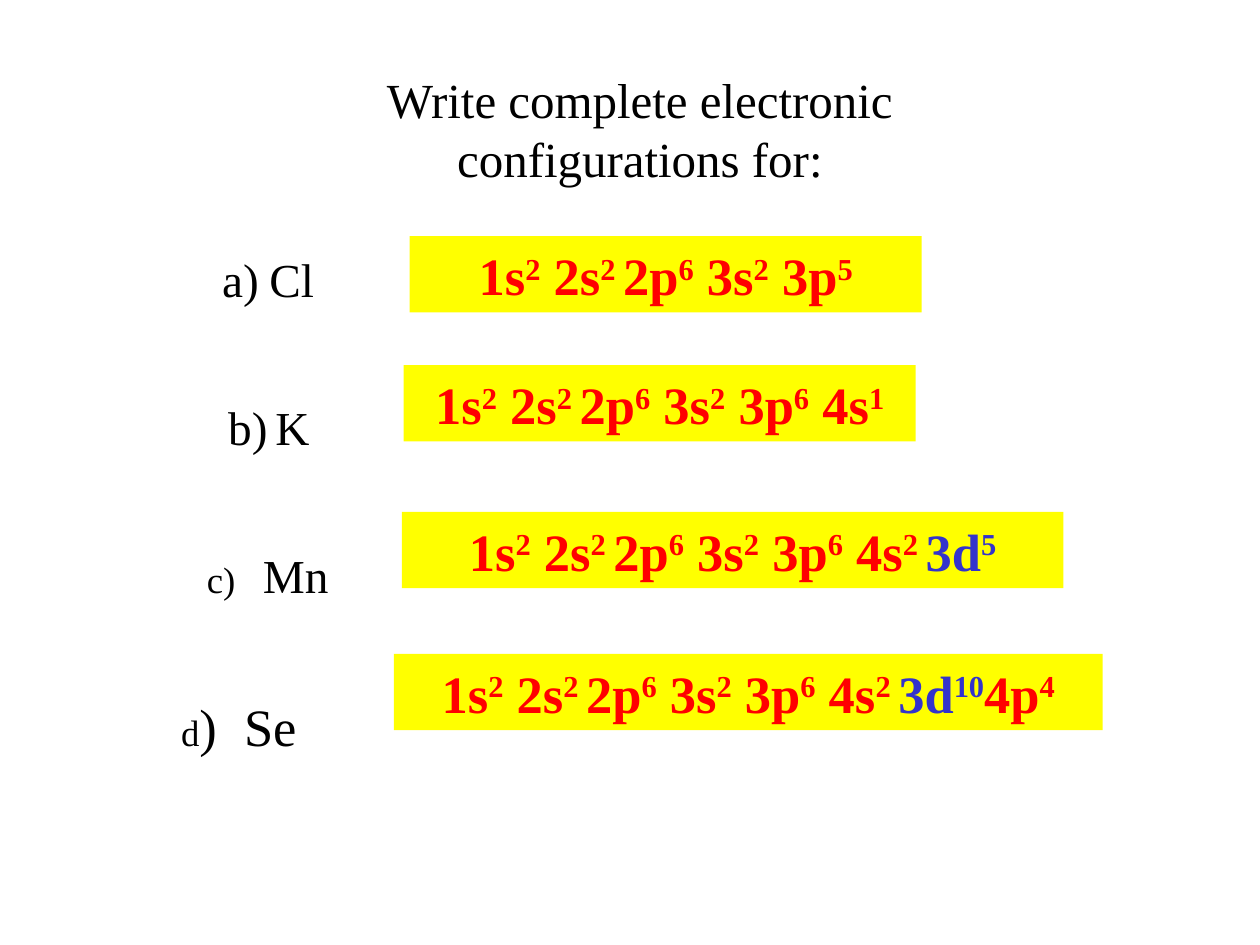
from pptx import Presentation
from pptx.dml.color import RGBColor
from pptx.enum.shapes import MSO_SHAPE
from pptx.enum.text import MSO_ANCHOR, MSO_AUTO_SIZE, PP_ALIGN
from pptx.util import Cm, Pt
from lxml.etree import SubElement
from pptx.oxml.ns import qn

BLACK, RED, BLUE, YELLOW = "000000", "FF0000", "3333CC", "FFFF00"


def color(code):
    return RGBColor.from_string(code)


def write(para, text, size=30, code=BLACK, bold=False, sup=False):
    run = para.add_run()
    run.text = text
    font = run.font
    font.name = "Times New Roman"
    font.size = Pt(size)
    font.bold = bold
    font.color.rgb = color(code)
    if sup:
        font._element.set("baseline", "30000")


def place(shape, box):
    shape.left, shape.top, shape.width, shape.height = map(Cm, box)
    frame = shape.text_frame
    frame.word_wrap = True
    frame.auto_size = MSO_AUTO_SIZE.NONE
    return frame


def add_title(slide, box):
    frame = place(slide.shapes.title, box)
    frame.margin_left = frame.margin_right = Cm(1)
    frame.vertical_anchor = MSO_ANCHOR.MIDDLE
    para = frame.paragraphs[0]
    para.alignment = PP_ALIGN.CENTER
    write(para, "Write complete electronic configurations for:", size=28)


def set_list(para, left, hang, start):
    """Hanging indent with a tab stop; lettered when start is given."""
    props = para._p.get_or_add_pPr()
    props.set("marL", str(Cm(left + hang)))
    props.set("indent", str(-Cm(hang)))
    if start:
        SubElement(props, qn("a:buFont"), typeface="Times New Roman")
        SubElement(props, qn("a:buAutoNum"), type="alphaLcParenR",
                   startAt=str(start))
    else:
        SubElement(props, qn("a:buNone"))
    tabs = SubElement(props, qn("a:tabLst"))
    SubElement(tabs, qn("a:tab"), pos=str(Cm(left + hang)), algn="l")


def add_list(slide, box, items):
    frame = place(slide.placeholders[1], box)
    frame.margin_left = frame.margin_top = 0
    frame.vertical_anchor = MSO_ANCHOR.TOP
    for num, (left, hang, start, runs) in enumerate(items):
        para = frame.add_paragraph() if num else frame.paragraphs[0]
        para.alignment = PP_ALIGN.LEFT
        para.line_spacing = 1.0
        para.space_before = Pt(52 if num else 0)
        set_list(para, left, hang, start)
        for text, size in runs:
            write(para, text, size=size)


def add_answer(slide, box, terms):
    shape = slide.shapes.add_shape(MSO_SHAPE.RECTANGLE, *map(Cm, box))
    shape.shadow.inherit = False
    shape.fill.solid()
    shape.fill.fore_color.rgb = color(YELLOW)
    shape.line.fill.background()
    frame = place(shape, box)
    frame.vertical_anchor = MSO_ANCHOR.BOTTOM
    para = frame.paragraphs[0]
    para.alignment = PP_ALIGN.CENTER
    for base, count in terms:
        code = BLUE if base == "3d" else RED
        write(para, base, code=code, bold=True)
        write(para, count, code=code, bold=True, sup=True)


def main():
    deck = Presentation()
    deck.slide_width, deck.slide_height = Cm(25.4), Cm(19.05)
    slide = deck.slides.add_slide(deck.slide_layouts[1])

    add_title(slide, (4.65, 1.27, 16.5, 2.64))

    # Elements: left edge, hang, first letter, runs
    add_list(slide, (3.5, 5.05, 4.3, 10.2), [
        (0.98, 0.95, 1, [("Cl", 27)]),
        (1.1, 0.95, 2, [("K", 27)]),
        (0.67, 1.13, None, [("c)\t", 21), ("Mn", 27)]),
        (0.15, 1.27, None, [("d", 21), (")\tSe", 30)]),
    ])

    # Answers: each builds on the shells before it
    core = [("1s", "2"), (" 2s", "2 "), ("2p", "6"), (" 3s", "2")]
    full = core + [(" 3p", "6")]
    outer = full + [(" 4s", "2 ")]
    answers = [
        (8.26, 4.76, 10.32, core + [(" 3p", "5")]),
        (8.14, 7.36, 10.32, full + [(" 4s", "1")]),
        (8.1, 10.32, 13.34, outer + [("3d", "5")]),
        (7.94, 13.18, 14.29, outer + [("3d", "10"), ("4p", "4")]),
    ]
    for left, top, width, terms in answers:
        add_answer(slide, (left, top, width, 1.54), terms)

    deck.save("out.pptx")


if __name__ == "__main__":
    main()
